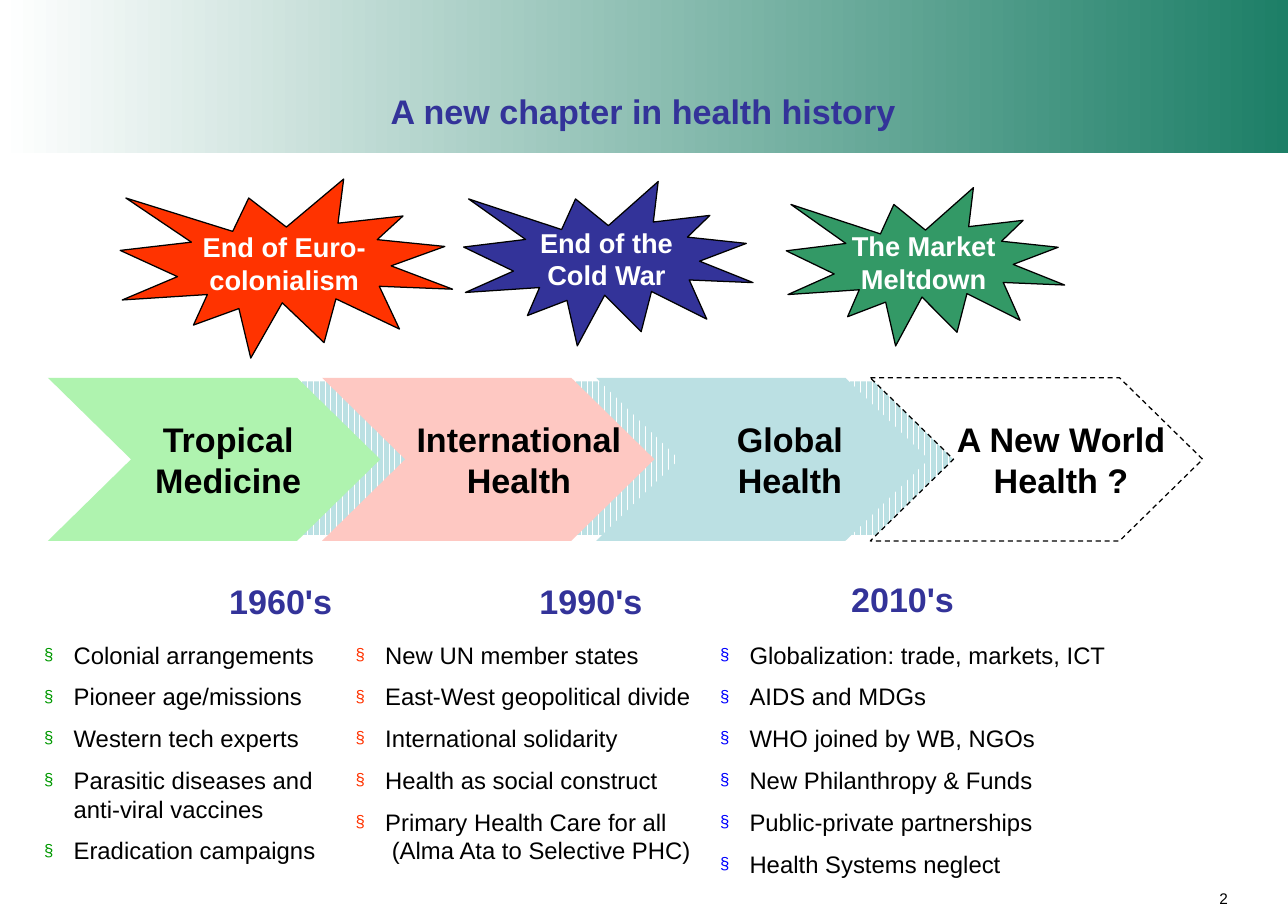
from lxml import etree
from pptx import Presentation
from pptx.dml.color import RGBColor
from pptx.enum.dml import MSO_LINE, MSO_PATTERN
from pptx.enum.shapes import MSO_SHAPE
from pptx.enum.text import MSO_ANCHOR, MSO_AUTO_SIZE, PP_ALIGN
from pptx.oxml.ns import qn
from pptx.util import Inches, Pt

RECTANGLE, CHEVRON, BURST = MSO_SHAPE.RECTANGLE, MSO_SHAPE.CHEVRON, MSO_SHAPE.EXPLOSION1
LEFT, CENTER, RIGHT = PP_ALIGN.LEFT, PP_ALIGN.CENTER, PP_ALIGN.RIGHT
TOP, MIDDLE = MSO_ANCHOR.TOP, MSO_ANCHOR.MIDDLE
NO_AUTOFIT = MSO_AUTO_SIZE.NONE
DASH, STRIPES = MSO_LINE.DASH, MSO_PATTERN.DARK_VERTICAL

COLORS = {
    "white": "FFFFFF", "black": "000000", "teal": "1D7F67", "navy": "333399",
    "red": "FF3300", "green": "339966", "mint": "AFF3AF", "rose": "FEC8C2",
    "sky": "BBE0E3", "leaf": "009900", "blue": "0000FF",
}

EVENTS = [
    (("End of Euro-", "colonialism"), (0.98, 1.46, 2.71, 1.46), "red"),
    (("End of the", "Cold War"), (3.78, 1.48, 2.36, 1.34), "navy"),
    (("The Market", "Meltdown"), (6.41, 1.53, 2.27, 1.29), "green"),
]
ERAS = [
    (("Tropical", "Medicine"), "mint", 0.33, False),
    (("International", "Health"), "rose", 0.6, False),
    (("Global", "Health"), "sky", 0.55, False),
    (("A New World", "Health ?"), "white", 0.5, True),
]
DECADES = [("1960's", 1.77, 4.68), ("1990's", 4.3, 4.68), ("2010's", 6.84, 4.67)]
FEATURES = [
    (1, (0.26, 5.17, 2.68, 1.96), "leaf", [
        "Colonial arrangements", "Pioneer age/missions", "Western tech experts",
        "Parasitic diseases and anti-viral vaccines", "Eradication campaigns"]),
    (2, (2.8, 5.17, 3.24, 2.3), "red", [
        "New UN member states", "East-West geopolitical divide",
        "International solidarity", "Health as social construct",
        "Primary Health Care for all\n (Alma Ata to Selective PHC)"]),
    (3, (5.77, 5.17, 3.76, 2.08), "blue", [
        "Globalization: trade, markets, ICT", "AIDS and MDGs",
        "WHO joined by WB, NGOs", "New Philanthropy & Funds",
        "Public-private partnerships", "Health Systems neglect"]),
]


def rgb(name):
    return RGBColor.from_string(COLORS[name])


class HealthSlide:
    """Holds the slide and its text style, and draws each kind of element."""

    font_name = "Arial"

    def __init__(self, slide):
        self.slide = slide

    def add_text(self, paragraph, text, size, color, bold=True, align=CENTER):
        paragraph.alignment = align
        for number, line in enumerate(text.split("\n")):
            if number:
                paragraph.add_line_break()
            run = paragraph.add_run()
            run.text = line
            run.font.name = self.font_name
            run.font.size = Pt(size)
            run.font.bold = bold
            run.font.color.rgb = rgb(color)

    def place(self, placeholder, box):
        (placeholder.left, placeholder.top,
         placeholder.width, placeholder.height) = map(Inches, box)
        placeholder.text_frame.auto_size = NO_AUTOFIT
        return placeholder.text_frame

    def shape(self, kind, box):
        shape = self.slide.shapes.add_shape(kind, *map(Inches, box))
        shape.shadow.inherit = False
        shape.line.fill.background()
        return shape

    def labelled(self, kind, box, lines, fill, size, color):
        shape = self.shape(kind, box)
        shape.fill.solid()
        shape.fill.fore_color.rgb = rgb(fill)
        frame = shape.text_frame
        frame.word_wrap = False
        frame.vertical_anchor = MIDDLE
        for number, line in enumerate(lines):
            paragraph = frame.add_paragraph() if number else frame.paragraphs[0]
            self.add_text(paragraph, line, size, color)
        return shape

    def outline(self, shape):
        shape.line.color.rgb = rgb("black")
        shape.line.width = Pt(0.75)

    def header(self, box):
        band = self.shape(RECTANGLE, box)
        band.fill.gradient()
        band.fill.gradient_angle = 0
        for stop, color, position in zip(band.fill.gradient_stops, ("white", "teal"), (0, 1)):
            stop.color.rgb = rgb(color)
            stop.position = position
        self.slide.shapes._spTree.insert(2, band._element)

    def title(self, text, box):
        frame = self.place(self.slide.shapes.title, box)
        frame.vertical_anchor = MIDDLE
        frame.paragraphs[0].line_spacing = 0.9
        self.add_text(frame.paragraphs[0], text, 20, "navy")

    def event(self, lines, box, fill):
        self.outline(self.labelled(BURST, box, lines, fill, 16, "white"))

    def striped_chevron(self, box):
        backdrop = self.shape(CHEVRON, box)
        backdrop.adjustments[0] = 0.49
        backdrop.fill.patterned()
        backdrop.fill.pattern = STRIPES
        backdrop.fill.fore_color.rgb = rgb("sky")
        backdrop.fill.back_color.rgb = rgb("white")

    def era(self, lines, box, fill, inset, dashed):
        chevron = self.labelled(CHEVRON, box, lines, fill, 20, "black")
        chevron.adjustments[0] = 0.51
        chevron.text_frame.margin_left = Inches(inset)
        if dashed:
            self.outline(chevron)
            chevron.line.dash_style = DASH

    def text_box(self, text, box, size, color, bold, align, margin):
        frame = self.slide.shapes.add_textbox(*map(Inches, box)).text_frame
        frame.word_wrap = True
        frame.margin_left = frame.margin_right = Inches(margin)
        frame.margin_top = frame.margin_bottom = Inches(margin / 2)
        self.add_text(frame.paragraphs[0], text, size, color, bold, align)

    def bullet(self, paragraph, color):
        properties = paragraph._p.get_or_add_pPr()
        properties.set("marL", str(Inches(0.24)))
        properties.set("indent", str(-Inches(0.24)))
        tint = etree.SubElement(properties, qn("a:buClr"))
        etree.SubElement(tint, qn("a:srgbClr"), val=COLORS[color])
        etree.SubElement(properties, qn("a:buSzPct"), val="70000")
        etree.SubElement(properties, qn("a:buFont"), typeface=self.font_name)
        etree.SubElement(properties, qn("a:buChar"), char="§")

    def feature_list(self, index, box, color, items):
        frame = self.place(self.slide.placeholders[index], box)
        frame.vertical_anchor = TOP
        for number, item in enumerate(items):
            paragraph = frame.add_paragraph() if number else frame.paragraphs[0]
            self.bullet(paragraph, color)
            paragraph.line_spacing = 1.0
            paragraph.space_before = Pt(7.7 if number else 0)
            self.add_text(paragraph, item, 14, "black", False, LEFT)


def main():
    deck = Presentation()
    deck.slide_width, deck.slide_height = Inches(10.5), Inches(7.5)
    page = HealthSlide(deck.slides.add_slide(deck.slide_layouts.get_by_name("Comparison")))
    spare = page.slide.placeholders[4]._element
    spare.getparent().remove(spare)

    page.header((0, 0, 10.5, 1.25))
    page.title("A new chapter in health history", (0.52, 0.3, 9.45, 1.25))
    for event in EVENTS:
        page.event(*event)
    page.striped_chevron((0.52, 3.11, 9.19, 1.25))
    for step, (lines, fill, inset, dashed) in enumerate(ERAS):
        page.era(lines, (0.39 + 2.235 * step, 3.08, 2.71, 1.33), fill, inset, dashed)
    for decade, left, top in DECADES:
        page.text_box(decade, (left, top, 1.14, 0.43), 20, "navy", True, LEFT, 0.1)
    for features in FEATURES:
        page.feature_list(*features)
    page.text_box("2", (9.81, 7.25, 0.2, 0.15), 9, "black", False, RIGHT, 0)
    deck.save("out.pptx")


if __name__ == "__main__":
    main()
